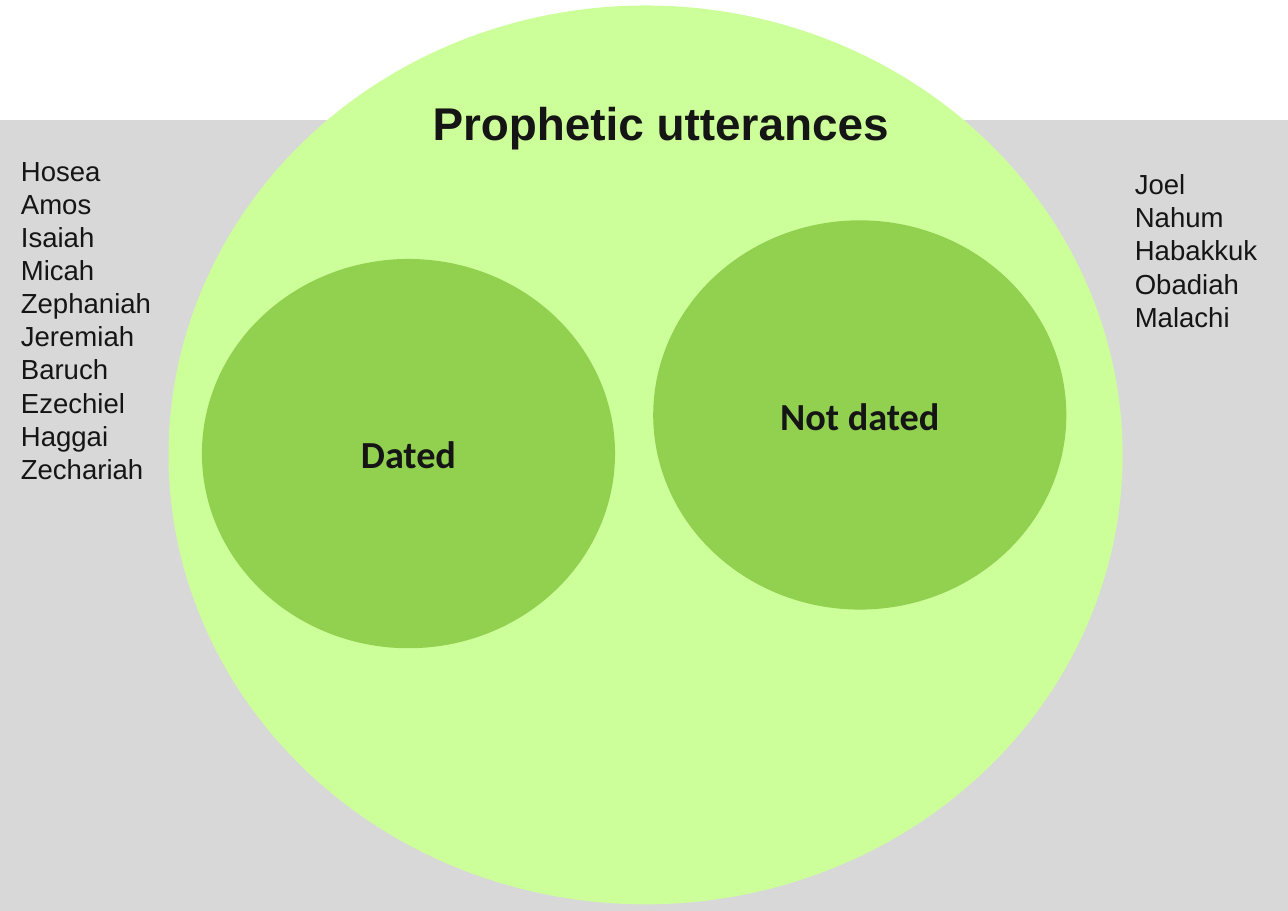
import pptx
import pptx.dml.color
import pptx.enum.shapes
import pptx.enum.text
import pptx.util

Inches, Pt = pptx.util.Inches, pptx.util.Pt
RGBColor = pptx.dml.color.RGBColor
MSO_SHAPE = pptx.enum.shapes.MSO_SHAPE
PP_ALIGN = pptx.enum.text.PP_ALIGN

WIDTH, HEIGHT = 11.69, 8.27
GREY = RGBColor(0xD8, 0xD8, 0xD8)
PALE_GREEN = RGBColor(0xCC, 0xFF, 0x99)
GREEN = RGBColor(0x92, 0xD0, 0x50)
INK = RGBColor(0x15, 0x15, 0x15)

DATED_PROPHETS = ["Hosea", "Amos", "Isaiah", "Micah", "Zephaniah", "Jeremiah",
                  "Baruch", "Ezechiel", "Haggai", "Zechariah"]
UNDATED_PROPHETS = ["Joel", "Nahum", "Habakkuk", "Obadiah", "Malachi"]


def add_area(slide, preset, box, color):
    """Flat filled area without outline or shadow."""
    area = slide.shapes.add_shape(preset, *map(Inches, box))
    area.shadow.inherit = False
    area.fill.solid()
    area.fill.fore_color.rgb = color
    area.line.fill.background()
    return area


def write(frame, lines, font_name, size, bold=False, align=PP_ALIGN.LEFT, pitch=None):
    """Put one paragraph per line into a text frame."""
    frame.margin_left = frame.margin_right = Inches(0.11)
    frame.margin_top = frame.margin_bottom = Inches(0.06)
    frame.text = "\n".join(lines)
    for paragraph in frame.paragraphs:
        paragraph.alignment = align
        if pitch:
            paragraph.line_spacing = Pt(pitch)
        font = paragraph.font
        font.name, font.size, font.bold = font_name, Pt(size), bold
        font.color.rgb = INK


def add_label(slide, box, lines, size, bold=False, pitch=None):
    """Unwrapped text box that fits its lines."""
    frame = slide.shapes.add_textbox(*map(Inches, box)).text_frame
    frame.word_wrap = False
    frame.auto_size = pptx.enum.text.MSO_AUTO_SIZE.SHAPE_TO_FIT_TEXT
    write(frame, lines, "Arial", size, bold, pitch=pitch)


def add_group_circle(slide, box, name):
    """Inner circle with its centred name."""
    frame = add_area(slide, MSO_SHAPE.OVAL, box, GREEN).text_frame
    frame.vertical_anchor = pptx.enum.text.MSO_ANCHOR.MIDDLE
    write(frame, [name], "Calibri", 25, True, PP_ALIGN.CENTER)


def add_utterances(slide, box):
    """Outer circle holding the title and the two groups."""
    left, top, width, height = box
    add_area(slide, MSO_SHAPE.OVAL, box, PALE_GREEN)
    group_size = (0.433 * width, 0.433 * height)
    for name, x, y in [("Dated", 0.035, 0.282), ("Not dated", 0.508, 0.239)]:
        add_group_circle(slide, (left + x * width, top + y * height, *group_size), name)
    add_label(slide, (left + 0.264 * width, top + 0.092 * height, 0.51 * width, 0.62),
              ["Prophetic utterances"], 30, True)


def add_prophets(slide, box, names):
    """List of prophets beside the circle."""
    add_label(slide, box, names, 18, pitch=21.6)


def main():
    deck = pptx.Presentation()
    deck.slide_width, deck.slide_height = Inches(WIDTH), Inches(HEIGHT)
    slide = deck.slides.add_slide(deck.slide_layouts[6])

    # Grey ground below the white header band
    header = 1.09
    add_area(slide, MSO_SHAPE.RECTANGLE, (0, header, WIDTH, HEIGHT - header), GREY)

    # Circles and title
    add_utterances(slide, (1.53, 0.05, 8.66, 8.16))

    # Names at either side
    add_prophets(slide, (0.08, 1.34, 1.42, 3.14), DATED_PROPHETS)
    add_prophets(slide, (10.19, 1.46, 1.35, 1.63), UNDATED_PROPHETS)

    deck.save("out.pptx")


if __name__ == "__main__":
    main()
